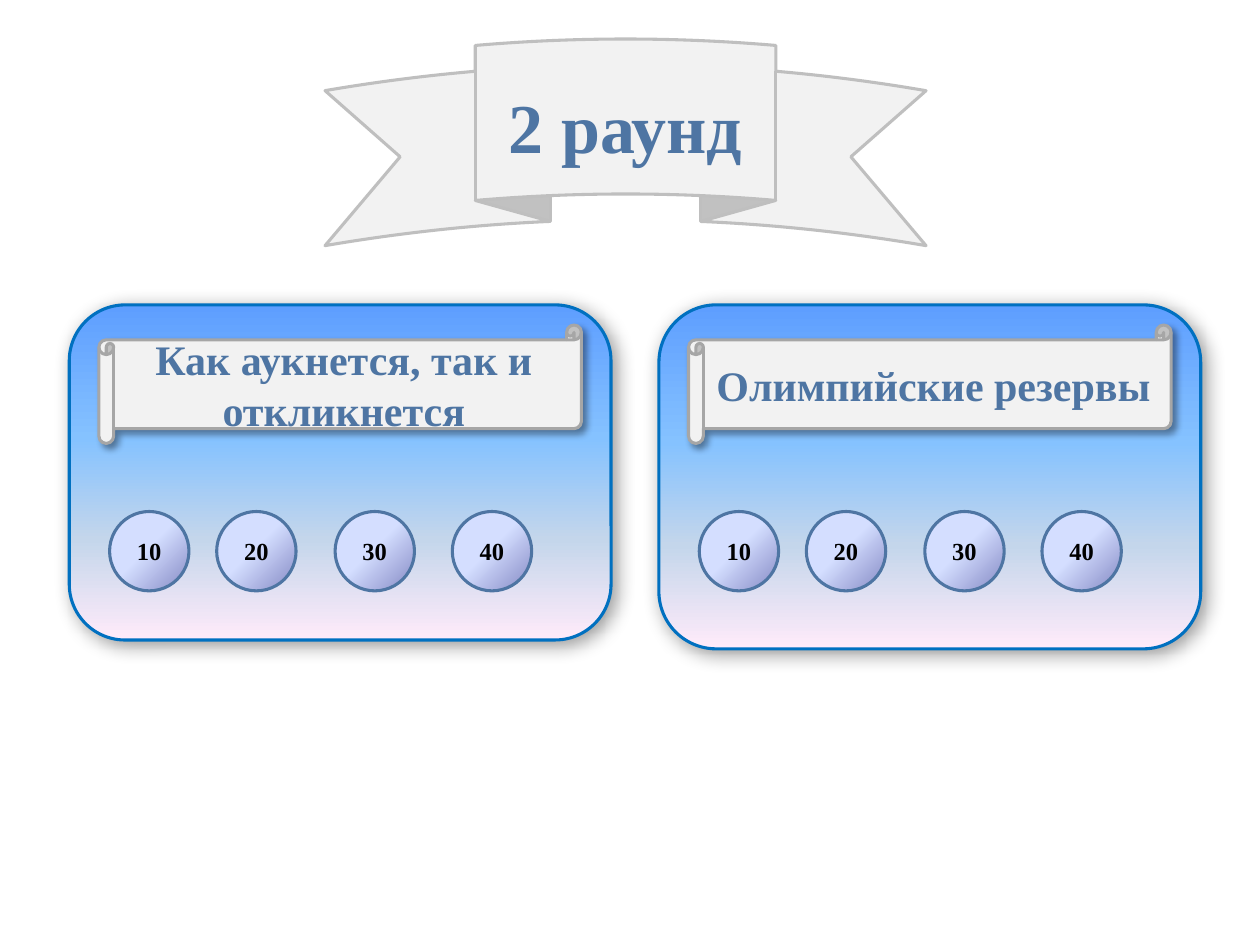
from lxml.etree import SubElement
from pptx import Presentation
from pptx.dml.color import RGBColor
from pptx.enum.shapes import MSO_SHAPE
from pptx.enum.text import MSO_ANCHOR, PP_ALIGN
from pptx.oxml.ns import qn
from pptx.util import Inches, Pt

# Content
HEADING = "2 раунд"
BOARDS = [  # theme, left, height
    ("Как аукнется, так и откликнется", 0.55, 2.66),
    ("Олимпийские резервы", 5.23, 2.73),
]
SCORES = [("10", 0.32), ("20", 1.17), ("30", 2.11), ("40", 3.04)]  # offset in board

# Look
BLUE = "4E75A3"
PALE = "F2F2F2"
SKY = [(0, "5E9EFF"), (40, "85C2FF"), (70, "C4D6EB"), (100, "FFEBFA")]
PEARL = [(0, "8488C4"), (53, "D4DEFF"), (83, "D4DEFF"), (100, "96AB94")]
HEADING_FONT = {"size": Pt(40), "name": "Times New Roman", "bold": True}
THEME_FONT = {**HEADING_FONT, "size": Pt(24)}
SCORE_FONT = {**HEADING_FONT, "size": Pt(14)}
FRAME = {
    "word_wrap": True,
    "vertical_anchor": MSO_ANCHOR.MIDDLE,
    "margin_left": Inches(0.05),
    "margin_right": Inches(0.05),
}


def rgb(code):
    return RGBColor.from_string(code)


def set_all(target, values):
    for key, value in values.items():
        setattr(target, key, value)


def write(shape, text, font, color):
    set_all(shape.text_frame, FRAME)
    paragraph = shape.text_frame.paragraphs[0]
    paragraph.text = text
    paragraph.alignment = PP_ALIGN.CENTER
    set_all(paragraph.runs[0].font, font)
    paragraph.runs[0].font.color.rgb = rgb(color)


def add_color(parent, code, alpha=100):
    color = SubElement(parent, qn("a:srgbClr"), val=code)
    if alpha < 100:
        SubElement(color, qn("a:alpha"), val=str(alpha * 1000))


def add_gradient(shape, stops, radial):
    shape.fill.background()
    fill = shape.element.spPr.find(qn("a:noFill"))
    gradient = SubElement(shape.element.spPr, qn("a:gradFill"), rotWithShape="1")
    fill.getparent().replace(fill, gradient)
    stop_list = SubElement(gradient, qn("a:gsLst"))
    for position, code in stops:
        add_color(SubElement(stop_list, qn("a:gs"), pos=str(position * 1000)), code)
    if radial:
        circle = SubElement(gradient, qn("a:path"), path="circle")
        SubElement(circle, qn("a:fillToRect"), l="100000", t="100000")
    else:
        SubElement(gradient, qn("a:lin"), ang="5400000", scaled="0")


def add_shadow(shape, blur):
    effects = shape.element.spPr.find(qn("a:effectLst"))
    shadow = SubElement(
        effects, qn("a:outerShdw"), blurRad=str(Pt(blur)), dist=str(Pt(3)),
        dir="2700000", algn="tl", rotWithShape="0",
    )
    add_color(shadow, "000000", 40)


def add_figure(slide, kind, box, fill, line, radial=False, blur=None):
    shape = slide.shapes.add_shape(kind, *map(Inches, box))
    shape.shadow.inherit = False
    if isinstance(fill, str):
        shape.fill.solid()
        shape.fill.fore_color.rgb = rgb(fill)
    else:
        add_gradient(shape, fill, radial)
    shape.line.color.rgb = rgb(line)
    shape.line.width = Pt(1.75)
    if blur:
        add_shadow(shape, blur)
    return shape


def add_board(slide, theme, left, height):
    add_figure(slide, MSO_SHAPE.ROUNDED_RECTANGLE, (left, 2.42, 4.3, height),
               SKY, "0070C0", blur=11)
    scroll = add_figure(slide, MSO_SHAPE.HORIZONTAL_SCROLL,
                        (left + 0.235, 2.58, 3.83, 0.94), PALE, "A6A6A6", blur=4)
    write(scroll, theme, THEME_FONT, BLUE)
    for score, offset in SCORES:
        button = add_figure(slide, MSO_SHAPE.OVAL, (left + offset, 4.06, 0.63, 0.63),
                            PEARL, BLUE, radial=True)
        write(button, score, SCORE_FONT, "000000")


def main():
    deck = Presentation()
    deck.slide_width, deck.slide_height = Inches(10), Inches(7.5)
    slide = deck.slides.add_slide(deck.slide_layouts[5])

    # Ribbon with the heading on its front panel
    ribbon = add_figure(slide, MSO_SHAPE.CURVED_UP_RIBBON, (2.58, 0.31, 4.77, 1.64),
                        PALE, "BFBFBF")
    title = slide.shapes.title
    title.element.addprevious(ribbon.element)
    set_all(title, {"left": Inches(3.77), "top": Inches(0.38),
                    "width": Inches(2.39), "height": Inches(1.23)})
    write(title, HEADING, HEADING_FONT, BLUE)

    # Theme boards with score buttons
    for board in BOARDS:
        add_board(slide, *board)

    deck.save("out.pptx")


if __name__ == "__main__":
    main()
